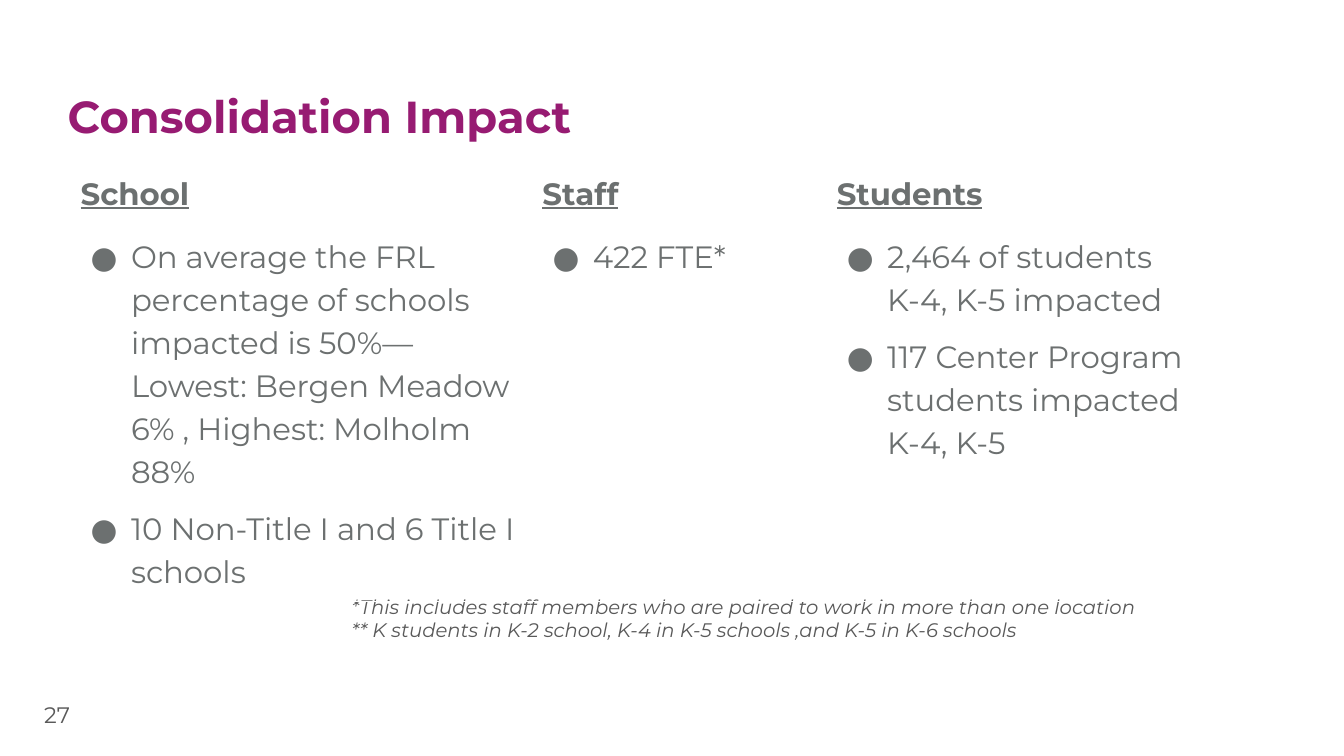
import pptx
import pptx.util
import pptx.dml.color
import pptx.enum.text
import pptx.oxml
import pptx.oxml.ns

theme = {
    "font": "Montserrat",
    "plum": "971B72", "gray": "6C7070", "dark": "595959", "white": "FFFFFF",
    "title": 32, "body": 22, "num": 16, "note": 14,
}
unit = 9144  # 100 px to the inch
Anchor = pptx.enum.text.MSO_ANCHOR
Fit = pptx.enum.text.MSO_AUTO_SIZE


def px(*sizes):
    return [pptx.util.Emu(size * unit) for size in sizes]


def write(para, text, size, color, bold=False, italic=False, under=False):
    run = para.add_run()
    run.text = text
    font = run.font
    font.name = theme["font"]
    font.size = pptx.util.Pt(theme[size])
    font.color.rgb = pptx.dml.color.RGBColor.from_string(theme[color])
    font.bold, font.italic, font.underline = bold, italic, under


deck = pptx.Presentation()
deck.slide_width, deck.slide_height = px(1333, 750)
slide = deck.slides.add_slide(deck.slide_layouts[5])

# Title
title = slide.shapes.title
title.left, title.top, title.width, title.height = px(57, 78, 1072, 123)
head = title.text_frame.paragraphs[0]
head.alignment = pptx.enum.text.PP_ALIGN.LEFT
write(head, "Consolidation Impact", "title", "plum", bold=True)

# Page number and footnotes
num = slide.shapes.add_textbox(*px(34, 680, 80, 57))
write(num.text_frame.paragraphs[0], "27", "num", "dark")

note = slide.shapes.add_textbox(*px(339, 580, 819, 67))
lines = [
    "*This includes staff members who are paired to work in more than one location",
    "** K students in K-2 school, K-4 in K-5 schools ,and K-5 in K-6 schools",
]
for i, line in enumerate(lines):
    para = note.text_frame.add_paragraph() if i else note.text_frame.paragraphs[0]
    write(para, line, "note", "dark", italic=True)

for box, anchor in ((title, Anchor.TOP), (num, Anchor.MIDDLE), (note, Anchor.TOP)):
    frame = box.text_frame
    frame.word_wrap = True
    frame.auto_size = Fit.NONE
    frame.vertical_anchor = anchor
    frame.margin_left, frame.margin_top, frame.margin_right, frame.margin_bottom = px(10, 10, 10, 10)

# Impact table: width, heading and bullets of each column
groups = [
    (458, "School", [
        "On average the FRL percentage of schools impacted is 50%— "
        "Lowest: Bergen Meadow 6% , Highest: Molholm 88%",
        "10 Non-Title I and 6 Title I schools",
    ]),
    (292, "Staff", ["422 FTE*"]),
    (375, "Students", [
        "2,464 of students K-4, K-5 impacted",
        "117 Center Program students impacted K-4, K-5",
    ]),
]
wide = sum(group[0] for group in groups)
table = slide.shapes.add_table(2, len(groups), *px(70, 164, wide, 84)).table
table.first_row = table.horz_banding = False
for row in table.rows:
    row.height = px(42)[0]

ns = pptx.oxml.ns.nsdecls("a")
for col, (width, name, items) in enumerate(groups):
    table.columns[col].width = px(width)[0]
    write(table.cell(0, col).text_frame.paragraphs[0], name, "body", "gray",
          bold=True, under=True)

    # Bullets
    frame = table.cell(1, col).text_frame
    for i, item in enumerate(items):
        para = frame.add_paragraph() if i else frame.paragraphs[0]
        props = para._p.get_or_add_pPr()
        props.set("marL", str(50 * unit))
        props.set("indent", str(-40 * unit))
        for mark in (f'<a:buClr {ns}><a:srgbClr val="{theme["gray"]}"/></a:buClr>',
                     f'<a:buFont {ns} typeface="{theme["font"]}"/>',
                     f'<a:buChar {ns} char="●"/>'):
            props.append(pptx.oxml.parse_xml(mark))
        para.line_spacing = 1.15
        if i:
            para.space_before = pptx.util.Pt(10)
        write(para, item, "body", "gray")

# Cell margins, borders and fill
for cell in table.iter_cells():
    cell.margin_left, cell.margin_top, cell.margin_right, cell.margin_bottom = px(10, 10, 10, 10)
    props = cell._tc.get_or_add_tcPr()
    for side in "LRTB":
        props.append(pptx.oxml.parse_xml(
            f'<a:ln{side} {ns} w="9525"><a:solidFill><a:srgbClr val="{theme["white"]}"/>'
            f'</a:solidFill></a:ln{side}>'))
    cell.fill.background()

deck.save("out.pptx")
